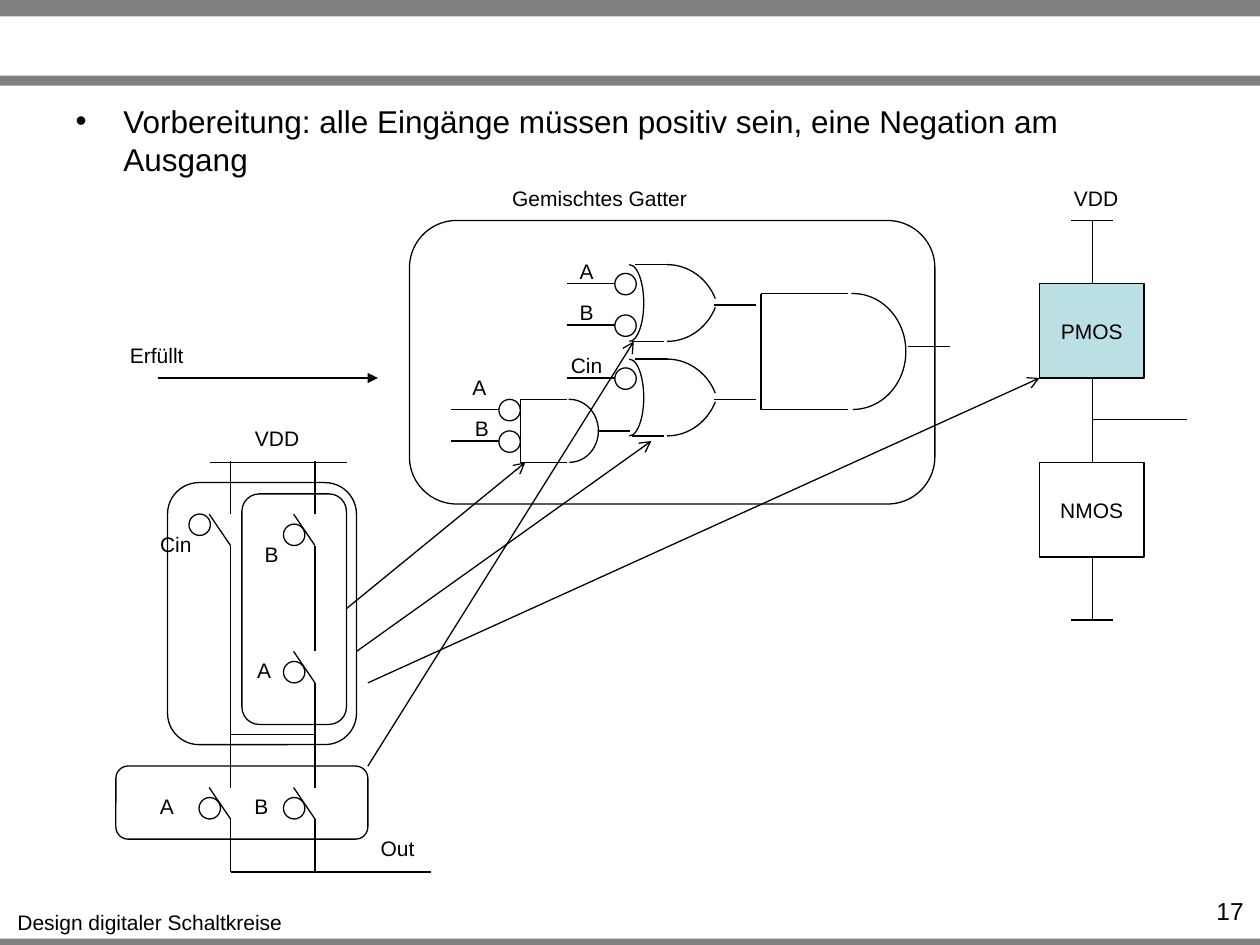
from lxml import etree
from pptx import Presentation
from pptx.dml.color import RGBColor
from pptx.enum import shapes, text
from pptx.oxml.ns import qn
from pptx.util import Inches, Pt

BLACK = RGBColor(0x00, 0x00, 0x00)
WHITE = RGBColor(0xFF, 0xFF, 0xFF)
GRAY = RGBColor(0x80, 0x80, 0x80)
TEAL = RGBColor(0xBB, 0xE0, 0xE3)
KIND = shapes.MSO_SHAPE
ALIGN = text.PP_ALIGN
LINE_WIDTH = Pt(0.75)
BUBBLE = 0.17


def write(frame, words, size=12, align=ALIGN.CENTER):
    para = frame.paragraphs[0]
    para.alignment = align
    span = para.add_run()
    span.text = words
    span.font.size = Pt(size)
    span.font.name = "Arial"
    span.font.color.rgb = BLACK


def add_label(page, words, left, top, width, height=0.3, **form):
    box = page.shapes.add_textbox(*map(Inches, (left, top, width, height)))
    box.text_frame.word_wrap = False
    box.text_frame.auto_size = text.MSO_AUTO_SIZE.SHAPE_TO_FIT_TEXT
    write(box.text_frame, words, **form)


def add_figure(parent, kind, left, top, width, height, fill=None, outline=True):
    figure = parent.shapes.add_shape(kind, *map(Inches, (left, top, width, height)))
    figure.shadow.inherit = False
    if fill is None:
        figure.fill.background()
    else:
        figure.fill.solid()
        figure.fill.fore_color.rgb = fill
    if outline:
        figure.line.color.rgb = BLACK
        figure.line.width = LINE_WIDTH
    else:
        figure.line.fill.background()
    return figure


def add_wire(parent, x1, y1, x2, y2, head=None):
    wire = parent.shapes.add_connector(
        shapes.MSO_CONNECTOR.STRAIGHT, *map(Inches, (x1, y1, x2, y2)))
    wire.line.color.rgb = BLACK
    wire.line.width = LINE_WIDTH
    if head:
        etree.SubElement(wire.line._get_or_add_ln(), qn("a:tailEnd"), type=head)
    etree.SubElement(wire._element.spPr, qn("a:effectLst"))


def add_arc(parent, left, top, width, height, end, flip=False):
    """Arc running clockwise from twelve o'clock to end, in units of 100000."""
    arc = add_figure(parent, KIND.ARC, left, top, width, height)
    arc.adjustments[0] = 162
    arc.adjustments[1] = end
    if flip:
        arc._element.spPr.xfrm.set("flipV", "1")


def add_bubble(page, left, top, fill=None):
    add_figure(page, KIND.OVAL, left, top, BUBBLE, BUBBLE, fill)


def add_and_gate(page, left, top, side, height, arc_left, arc_width):
    gate = page.shapes.add_group_shape()
    bottom = top + height
    for y in (top, bottom):
        add_wire(gate, left, y, left + side, y)
    add_arc(gate, arc_left, top, arc_width, height, 54.904, flip=True)
    add_wire(gate, left, top, left, bottom)


def add_or_gate(page, left, top):
    gate = page.shapes.add_group_shape()
    add_arc(gate, left, top, 0.23, 0.61, 53.878)
    add_arc(gate, left, top, 0.83, 0.88, 201.686)
    add_wire(gate, left + 0.42, top, left + 0.16, top)
    add_wire(gate, left + 0.39, top + 0.61, left + 0.14, top + 0.61)
    add_arc(gate, left, top - 0.27, 0.83, 0.88, 201.686, flip=True)


def add_switch(page, x, y, bubble_dx=-0.25, bubble_dy=-0.17):
    """Open switch with its pivot at x, y and a lead above and below."""
    add_wire(page, x, y, x - 0.17, y - 0.25)
    add_wire(page, x, y - 0.25, x, y - 0.67)
    add_wire(page, x, y + 0.42, x, y)
    add_bubble(page, x + bubble_dx, y + bubble_dy)


def add_frame(page):
    for top, height in ((7.45, 0.08), (0, 0.13), (0.6, 0.08)):
        add_figure(page, KIND.RECTANGLE, 0, top, 10, height, GRAY, outline=False)
    add_label(page, "Design digitaler Schaltkreise", 0.03, 7.17, 2.32)
    add_label(page, "17", 9.1, 7.06, 0.87, 0.24, size=14, align=ALIGN.RIGHT)


def add_bullet(page):
    body = page.placeholders[1]
    body.left, body.top, body.width, body.height = map(Inches, (0.5, 0.76, 9, 0.74))
    frame = body.text_frame
    frame.auto_size = text.MSO_AUTO_SIZE.NONE
    properties = frame.paragraphs[0]._p.get_or_add_pPr()
    properties.set("marL", str(Inches(0.38)))
    properties.set("indent", str(-Inches(0.38)))
    etree.SubElement(properties, qn("a:buChar"), char="•")
    frame.paragraphs[0].space_before = Pt(0)
    write(frame, "Vorbereitung: alle Eingänge müssen positiv sein, "
          "eine Negation am Ausgang", size=18, align=ALIGN.LEFT)


def add_cmos_stage(page):
    for name, top, fill in (("NMOS", 3.67, None), ("PMOS", 2.25, TEAL)):
        block = add_figure(page, KIND.RECTANGLE, 8.25, top, 0.83, 0.75, fill)
        block.text_frame.vertical_anchor = text.MSO_ANCHOR.MIDDLE
        write(block.text_frame, name)
    for top, bottom in ((1.75, 2.25), (3, 3.67), (4.42, 4.92)):
        add_wire(page, 8.67, top, 8.67, bottom)
    for rail in (1.75, 4.92):
        add_wire(page, 8.83, rail, 8.5, rail)
    add_wire(page, 8.67, 3.33, 9.42, 3.33)
    add_label(page, "VDD", 8.42, 1.42, 0.56)


def add_switch_network(page):
    add_switch(page, 1.83, 4.33, bubble_dx=-0.33, bubble_dy=-0.25)
    for x, y in ((2.5, 4.33), (2.5, 5.42), (1.83, 6.5), (2.5, 6.5)):
        add_switch(page, x, y)
    for wire in ((1.83, 4.75, 1.83, 5.83), (1.67, 3.67, 2.75, 3.67),
                 (1.83, 5.83, 2.5, 5.83), (1.83, 6.92, 3.42, 6.92)):
        add_wire(page, *wire)
    for outline in ((0.92, 6.08, 2, 0.58), (1.92, 3.92, 0.83, 1.83),
                    (1.33, 3.83, 1.5, 2.08)):
        add_figure(page, KIND.ROUNDED_RECTANGLE, *outline)
    for words, left, top, width in (
            ("VDD", 1.92, 3.33, 0.56), ("Cin", 1.17, 4.17, 0.45),
            ("B", 2, 4.25, 0.31), ("A", 1.94, 5.17, 0.31),
            ("A", 1.17, 6.25, 0.31), ("B", 1.92, 6.25, 0.31),
            ("Out", 2.92, 6.58, 0.47)):
        add_label(page, words, left, top, width)


def add_mixed_gate(page):
    add_label(page, "Gemischtes Gatter", 3.96, 1.42, 1.6)
    add_figure(page, KIND.ROUNDED_RECTANGLE, 3.25, 1.75, 4.17, 2.25)
    for left, y, length in ((5.67, 2.42, 0.33), (5.67, 3.17, 0.33),
                            (7.21, 2.75, 0.33), (4.75, 3.42, 0.25)):
        add_wire(page, left, y, left + length, y)
    add_and_gate(page, 4.13, 3.17, 0.37, 0.5, arc_left=4.29, arc_width=0.46)
    add_or_gate(page, 4.88, 2.85)
    add_or_gate(page, 4.88, 2.1)
    add_and_gate(page, 6.04, 2.33, 0.69, 0.92, arc_left=6.35, arc_width=0.84)
    for left, y, bubble_left, bubble_top in (
            (4.5, 2.25, 4.88, 2.17), (4.5, 2.58, 4.88, 2.5), (4.5, 3, 4.88, 2.92),
            (3.58, 3.25, 3.96, 3.17), (3.58, 3.5, 3.96, 3.42)):
        add_wire(page, left, y, left + 0.5, y)
        add_bubble(page, bubble_left, bubble_top, WHITE)
    for words, left, top, width in (
            ("A", 4.5, 2, 0.31), ("B", 4.5, 2.33, 0.31), ("Cin", 4.43, 2.75, 0.45),
            ("A", 3.65, 2.92, 0.31), ("B", 3.67, 3.25, 0.31)):
        add_label(page, words, left, top, width)


def add_mappings(page):
    """Arrows from each part of the switch network to its gate."""
    for ends in ((2.92, 5.42, 8.25, 3), (2.92, 6.08, 5.03, 2.71),
                 (2.75, 4.83, 4.17, 3.67), (2.83, 5.17, 5.17, 3.5)):
        add_wire(page, *ends, head="arrow")
    add_wire(page, 1.25, 3, 3, 3, head="triangle")
    add_label(page, "Erfüllt", 0.93, 2.67, 0.63)


def main():
    deck = Presentation()
    deck.slide_width, deck.slide_height = Inches(10), Inches(7.5)
    page = deck.slides.add_slide(deck.slide_layouts[1])
    title = page.shapes.title._element
    title.getparent().remove(title)
    add_frame(page)
    add_bullet(page)
    add_cmos_stage(page)
    add_switch_network(page)
    add_mixed_gate(page)
    add_mappings(page)
    deck.save("out.pptx")


if __name__ == "__main__":
    main()
